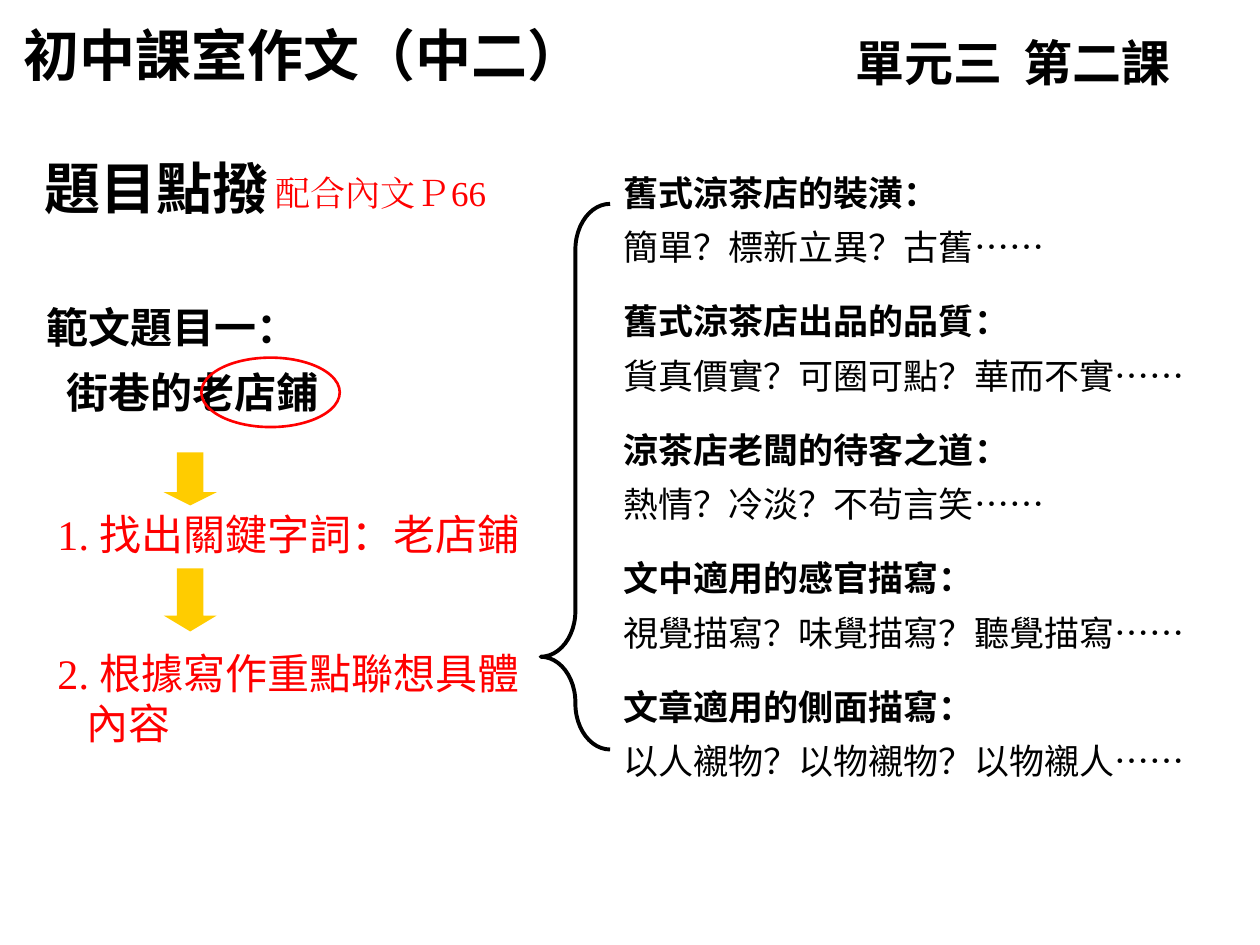
from pptx import Presentation
from pptx.dml.color import RGBColor
from pptx.enum.shapes import MSO_SHAPE as Shape
from pptx.oxml.ns import qn
from pptx.util import Cm, Pt
from lxml.etree import SubElement

BLACK, RED, GOLD = "000000", "FF0000", "FFCC00"
SANS, SERIF, HEADING, CHINESE = "DejaVu Sans", "Times New Roman", "Roboto", "Noto Sans CJK SC"

ASPECTS = [
    ("舊式涼茶店的裝潢：", "簡單？標新立異？古舊"),
    ("舊式涼茶店出品的品質：", "貨真價實？可圈可點？華而不實"),
    ("涼茶店老闆的待客之道：", "熱情？冷淡？不茍言笑"),
    ("文中適用的感官描寫：", "視覺描寫？味覺描寫？聽覺描寫"),
    ("文章適用的側面描寫：", "以人襯物？以物襯物？以物襯人"),
]


def color(value):
    return RGBColor.from_string(value)


def add_box(page, left, top, width, height):
    box = page.shapes.add_textbox(Cm(left), Cm(top), Cm(width), Cm(height))
    box.text_frame.word_wrap = True
    return box.text_frame


def add_para(frame, before=0, line=None, indent=0, tab=None):
    first = frame.paragraphs[0]
    para = frame.add_paragraph() if first.runs else first
    properties = para._p.get_or_add_pPr()
    if indent:
        properties.set("marL", str(Cm(indent)))
    if tab:
        stops = SubElement(properties, qn("a:tabLst"))
        SubElement(stops, qn("a:tab"), pos=str(Cm(tab)), algn="l")
    para.space_before = Pt(before)
    if line:
        para.line_spacing = line
    return para


def write(para, text, size=20, font=SANS, fill=BLACK, bold=False):
    span = para.add_run()
    span.text = text
    span.font.size = Pt(size)
    span.font.bold = bold
    span.font.color.rgb = color(fill)
    span.font.name = font
    SubElement(span._r.get_or_add_rPr(), qn("a:ea"), typeface=font)


def add_figure(page, kind, left, top, width, height, fill=None, line=None, weight=1, adjust=()):
    figure = page.shapes.add_shape(kind, Cm(left), Cm(top), Cm(width), Cm(height))
    figure.shadow.inherit = False
    for index, value in enumerate(adjust):
        figure.adjustments[index] = value
    if fill:
        figure.fill.solid()
        figure.fill.fore_color.rgb = color(fill)
    else:
        figure.fill.background()
    if line:
        figure.line.color.rgb = color(line)
        figure.line.width = Pt(weight)
    else:
        figure.line.fill.background()


def add_headings(page):
    course = add_box(page, 0.23, 0.28, 13.26, 1.6)
    write(add_para(course), "初中課室作文（中二）", size=32, font=HEADING, bold=True)
    lesson = add_box(page, 17, 0.53, 8.4, 1.45)
    write(add_para(lesson, tab=3.39), "單元三\t第二課", size=28, font=HEADING, bold=True)
    section = add_box(page, 0.64, 2.97, 7.82, 1.6)
    write(add_para(section), "題目點撥", size=32, font="Arial", bold=True)
    reference = add_box(page, 5.31, 3.33, 6.27, 1.09)
    write(add_para(reference), "配合內文Ｐ66", font=SERIF, fill=RED)


def add_topic(page):
    topic = add_box(page, 0.69, 5.64, 12.7, 2.9)
    for text, indent in (("範文題目一：", 0), ("街巷的老店鋪", 0.4)):
        write(add_para(topic, line=1.3, indent=indent), text, size=24, bold=True)
    add_figure(page, Shape.OVAL, 4.06, 7.21, 2.79, 1.4, line=RED, weight=1.5)


def add_step(page, top, height, number, text, rest=None):
    step = add_box(page, 0.91, top, 10.6, height)
    para = add_para(step)
    write(para, f"{number}. ", size=24, font=SERIF, fill=RED)
    write(para, text, size=24, fill=RED)
    if rest:
        write(add_para(step, indent=0.58), rest, size=24, fill=RED)


def add_aspects(page):
    frame = add_box(page, 12.32, 3.33, 12, 12.9)
    for index, (title, questions) in enumerate(ASPECTS):
        write(add_para(frame, before=18.4 if index else 0), title, bold=True)
        para = add_para(frame, before=7, line=Pt(24))
        write(para, questions)
        write(para, "……", font=CHINESE)


def main():
    deck = Presentation()
    deck.slide_width, deck.slide_height = Cm(25.4), Cm(19.05)
    page = deck.slides.add_slide(deck.slide_layouts[6])
    add_headings(page)
    add_topic(page)
    for top, height, head in ((9.12, 1.07, 0.25), (11.46, 1.27, 0.3)):
        add_figure(page, Shape.DOWN_ARROW, 3.3, top, 1.07, height, fill=GOLD, adjust=(0.5, head))
    add_step(page, 10.13, 1.27, 1, "找出關鍵字詞：老店鋪")
    add_step(page, 12.93, 2.29, 2, "根據寫作重點聯想具體", rest="內容")
    add_figure(page, Shape.LEFT_BRACE, 10.9, 4.11, 1.4, 11, line=BLACK, weight=2.25, adjust=(0.66, 0.83))
    add_aspects(page)
    deck.save("out.pptx")


if __name__ == "__main__":
    main()
